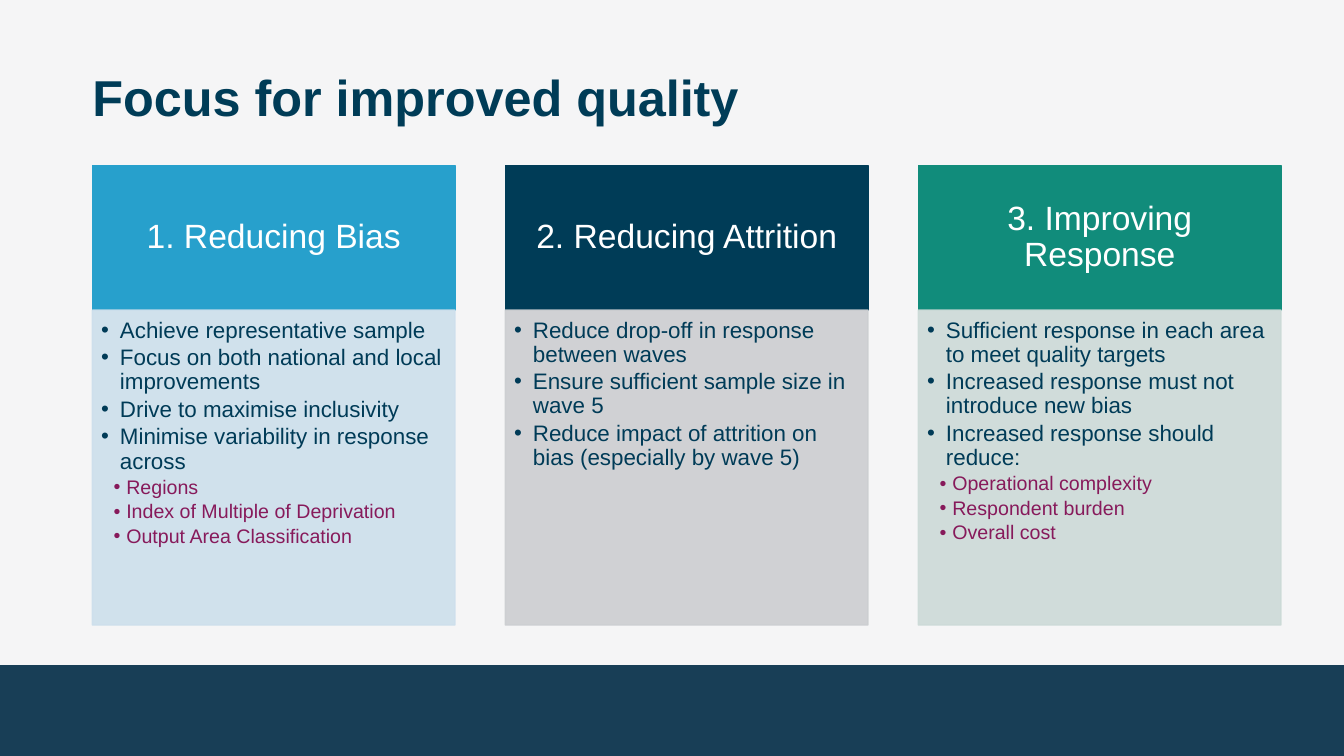
import dataclasses

import lxml.etree
import pptx
import pptx.dml.color
import pptx.enum.shapes
import pptx.enum.text
import pptx.oxml.ns
import pptx.util

Pt = pptx.util.Pt
qn = pptx.oxml.ns.qn
ALIGN = pptx.enum.text.PP_ALIGN
ANCHOR = pptx.enum.text.MSO_ANCHOR


@dataclasses.dataclass(frozen=True)
class Theme:
    font: str = "Arial"
    background: str = "F5F5F6"
    footer: str = "183E56"
    navy: str = "003C57"
    body: str = "003B57"
    detail: str = "871A5B"
    white: str = "FFFFFF"
    blue: str = "27A0CC"
    pale_blue: str = "CDDFEC"
    pale_grey: str = "CCCED1"
    green: str = "118C7B"
    pale_green: str = "CCDAD7"
    title_size: int = 36
    heading_size: int = 24
    body_size: int = 16
    detail_size: int = 14


class Builder:
    def __init__(self, slide, theme):
        self.slide = slide
        self.theme = theme
        self.paint(slide.background.fill, theme.background)

    def paint(self, fill, color):
        fill.solid()
        fill.fore_color.rgb = pptx.dml.color.RGBColor.from_string(color)

    def box(self, left, top, width, height, color, opacity=100, outlined=True):
        shape = self.slide.shapes.add_shape(
            pptx.enum.shapes.MSO_SHAPE.RECTANGLE, Pt(left), Pt(top), Pt(width), Pt(height))
        shape.shadow.inherit = False
        self.paint(shape.fill, color)
        if outlined:
            self.paint(shape.line.fill, color)
            shape.line.width = Pt(1)
        else:
            shape.line.fill.background()
        if opacity < 100:
            for shade in shape.element.spPr.iter(qn("a:srgbClr")):
                lxml.etree.SubElement(shade, qn("a:alpha"), val=str(opacity * 1000))
        return shape

    def frame(self, shape, insets, anchor):
        frame = shape.text_frame
        frame.word_wrap = True
        frame.vertical_anchor = anchor
        frame.margin_left, frame.margin_top, frame.margin_right, frame.margin_bottom = map(Pt, insets)
        return frame

    def add_text(self, paragraph, text, size, color, align=ALIGN.LEFT, spacing=0.9, bold=False):
        paragraph.alignment = align
        paragraph.line_spacing = spacing
        run = paragraph.add_run()
        run.text = text
        run.font.name = self.theme.font
        run.font.size = Pt(size)
        run.font.bold = bold
        run.font.color.rgb = pptx.dml.color.RGBColor.from_string(color)

    def title(self, text, left, top, width, height):
        box = self.slide.shapes.add_textbox(Pt(left), Pt(top), Pt(width), Pt(height))
        frame = self.frame(box, (0, 0, 0, 0), ANCHOR.TOP)
        self.add_text(frame.paragraphs[0], text, self.theme.title_size, self.theme.navy,
                      spacing=0.95, bold=True)

    def heading(self, text, left, top, width, height, color):
        box = self.box(left, top, width, height, color)
        frame = self.frame(box, (13.4, 7.7, 13.4, 7.7), ANCHOR.MIDDLE)
        self.add_text(frame.paragraphs[0], text, self.theme.heading_size, self.theme.white,
                      ALIGN.CENTER)

    def bullet(self, paragraph, level, indent, hanging):
        paragraph.level = level
        paragraph.space_after = Pt(2.4)
        properties = paragraph._p.get_or_add_pPr()
        properties.set("marL", str(Pt(indent)))
        properties.set("indent", str(-Pt(hanging)))
        lxml.etree.SubElement(properties, qn("a:buFont"), typeface=self.theme.font)
        lxml.etree.SubElement(properties, qn("a:buChar"), char="•")

    def panel(self, points, details, left, top, width, height, color):
        box = self.box(left, top, width, height, color, opacity=90)
        frame = self.frame(box, (6.2, 6.2, 8, 9), ANCHOR.TOP)
        theme = self.theme
        levels = [(points, 1, 13.5, 13.5, theme.body_size, theme.body),
                  (details, 2, 18, 9, theme.detail_size, theme.detail)]
        paragraph = frame.paragraphs[0]
        for texts, level, indent, hanging, size, ink in levels:
            for text in texts:
                if paragraph.runs:
                    paragraph = frame.add_paragraph()
                self.bullet(paragraph, level, indent, hanging)
                self.add_text(paragraph, text, size, ink)


def main():
    theme = Theme()
    deck = pptx.Presentation()
    deck.slide_width, deck.slide_height = Pt(960), Pt(540)
    builder = Builder(deck.slides.add_slide(deck.slide_layouts[6]), theme)

    margin, column_width, column_pitch = 66, 259, 295
    heading_top, heading_height, panel_height = 118, 103.5, 225
    builder.box(0, 475.2, 960, 64.8, theme.footer, outlined=False)
    builder.title("Focus for improved quality", margin, 50.4, 828, 42)

    focus_areas = [
        ("1. Reducing Bias", theme.blue, theme.pale_blue,
         ["Achieve representative sample",
          "Focus on both national and local improvements",
          "Drive to maximise inclusivity",
          "Minimise variability in response across"],
         ["Regions", "Index of Multiple of Deprivation", "Output Area Classification"]),
        ("2. Reducing Attrition", theme.navy, theme.pale_grey,
         ["Reduce drop-off in response between waves",
          "Ensure sufficient sample size in wave 5",
          "Reduce impact of attrition on bias (especially by wave 5)"],
         []),
        ("3. Improving Response", theme.green, theme.pale_green,
         ["Sufficient response in each area to meet quality targets",
          "Increased response must not introduce new bias",
          "Increased response should reduce:"],
         ["Operational complexity", "Respondent burden", "Overall cost"]),
    ]
    for column, (heading, strong, pale, points, details) in enumerate(focus_areas):
        left = margin + column * column_pitch
        builder.heading(heading, left, heading_top, column_width, heading_height, strong)
        builder.panel(points, details, left, heading_top + heading_height,
                      column_width, panel_height, pale)

    deck.save("out.pptx")


if __name__ == "__main__":
    main()
